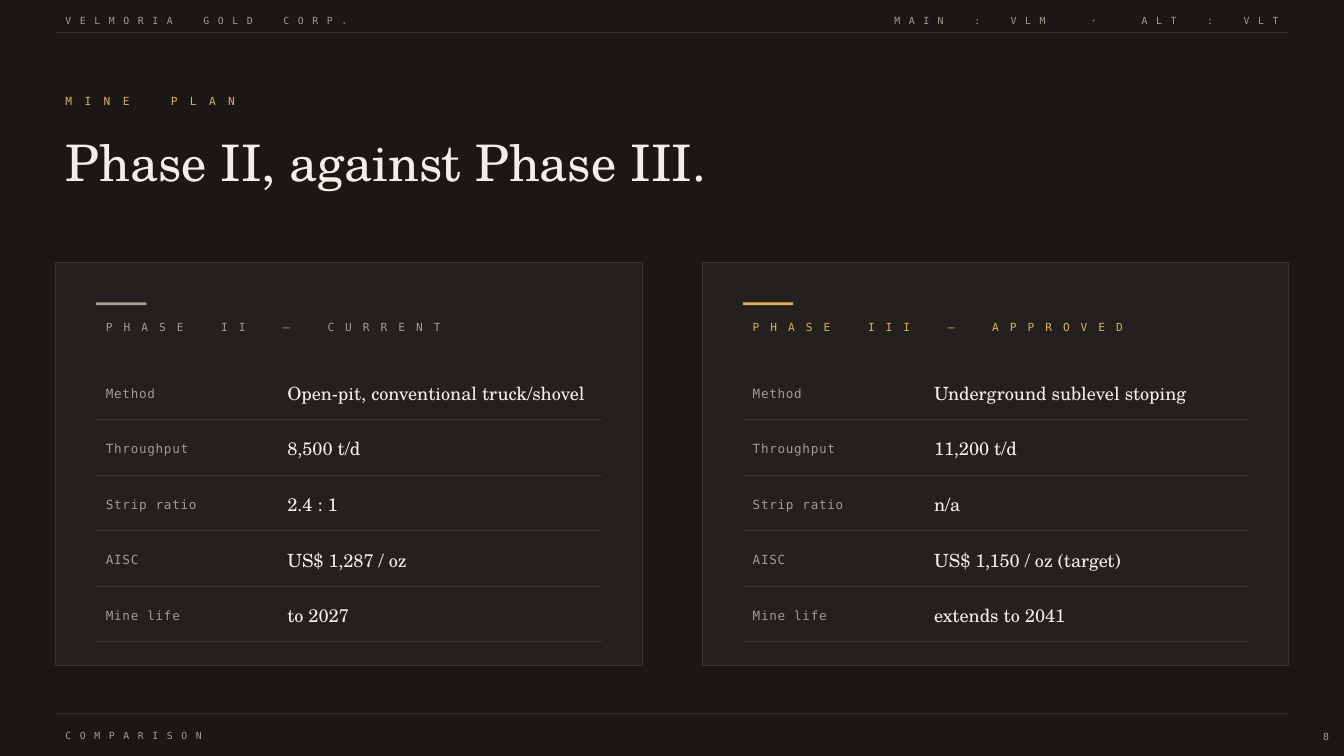
from dataclasses import dataclass

from lxml.etree import SubElement
from pptx import Presentation
from pptx.dml.color import RGBColor
from pptx.enum.shapes import MSO_CONNECTOR, MSO_SHAPE
from pptx.enum.text import MSO_ANCHOR, MSO_AUTO_SIZE, PP_ALIGN
from pptx.oxml.ns import qn
from pptx.util import Cm, Pt

BACKGROUND = RGBColor(0x1A, 0x17, 0x14)
PANEL = RGBColor(0x23, 0x20, 0x1D)
HAIRLINE = RGBColor(0x3A, 0x33, 0x2D)
MUTED = RGBColor(0xA3, 0x9C, 0x8F)
GOLD = RGBColor(0xD9, 0xB2, 0x5A)
IVORY = RGBColor(0xF4, 0xEF, 0xE6)

MONO = "DejaVu Sans Mono"
SERIF = "TeX Gyre Schola"
MONO_ADVANCE = 0.602  # character width as a share of the font size

# Lengths in centimetres
MARGIN = 1.4
CONTENT_WIDTH = 31.07
HALF_WIDTH = 15.24
CARD_TOP, CARD_WIDTH, CARD_HEIGHT = 6.6, 14.78, 10.16
CARD_PITCH = 16.3
CARD_PADDING = 1.02
ROW_TOP, ROW_PITCH, ROW_HEIGHT, RULE_OFFSET = 9.27, 1.4, 1.27, 1.3
VALUE_OFFSET = 4.57


@dataclass(frozen=True)
class Style:
    font: str
    size: float
    color: RGBColor
    spacing: float = 0


@dataclass(frozen=True)
class Box:
    left: float
    top: float
    width: float
    height: float

    def lengths(self) -> tuple:
        return Cm(self.left), Cm(self.top), Cm(self.width), Cm(self.height)


@dataclass(frozen=True)
class Phase:
    heading: str
    accent: RGBColor
    values: tuple


STRIP = Style(MONO, 7, MUTED, 1)
PAGE = Style(MONO, 7, MUTED)
EYEBROW = Style(MONO, 8, GOLD, 2)
TITLE = Style(SERIF, 36, IVORY)
ROW_LABEL = Style(MONO, 9, MUTED, 0.5)
ROW_VALUE = Style(SERIF, 13, IVORY)

MEASURES = ("Method", "Throughput", "Strip ratio", "AISC", "Mine life")
PHASES = (
    Phase("PHASE II — CURRENT", MUTED,
          ("Open-pit, conventional truck/shovel", "8,500 t/d", "2.4 : 1",
           "US$ 1,287 / oz", "to 2027")),
    Phase("PHASE III — APPROVED", GOLD,
          ("Underground sublevel stoping", "11,200 t/d", "n/a",
           "US$ 1,150 / oz (target)", "extends to 2041")),
)


def add_run(paragraph, text: str, style: Style, spacing: float) -> None:
    run = paragraph.add_run()
    run.text = text
    font_format = {"name": style.font, "size": Pt(style.size), "bold": False}
    for attribute, value in font_format.items():
        setattr(run.font, attribute, value)
    run.font.color.rgb = style.color
    if spacing:
        run._r.get_or_add_rPr().set("spc", str(round(spacing * 100)))


def prepare_frame(shape, align=PP_ALIGN.LEFT, anchor=MSO_ANCHOR.MIDDLE):
    frame_format = {"word_wrap": True, "auto_size": MSO_AUTO_SIZE.NONE,
                    "vertical_anchor": anchor}
    for attribute, value in frame_format.items():
        setattr(shape.text_frame, attribute, value)
    paragraph = shape.text_frame.paragraphs[0]
    paragraph.alignment = align
    return paragraph


def add_text(slide, box: Box, text: str, style: Style,
             align=PP_ALIGN.LEFT, anchor=MSO_ANCHOR.MIDDLE) -> None:
    shape = slide.shapes.add_textbox(*box.lengths())
    add_run(prepare_frame(shape, align, anchor), text, style, style.spacing)


def add_spaced_text(slide, box: Box, text: str, style: Style,
                    align=PP_ALIGN.LEFT) -> None:
    """Letter-spaced capitals, with one widened space between words."""
    paragraph = prepare_frame(slide.shapes.add_textbox(*box.lengths()), align)
    advance = style.size * MONO_ADVANCE + style.spacing
    words = text.split()
    for index, word in enumerate(words):
        if index:
            gap = 6 if "·" in (word, words[index - 1]) else 4
            add_run(paragraph, " ", style, style.spacing + (gap - 1) * advance)
        add_run(paragraph, " ".join(word), style, style.spacing)


def add_rectangle(slide, box: Box, fill: RGBColor, outlined: bool = False) -> None:
    shape = slide.shapes.add_shape(MSO_SHAPE.RECTANGLE, *box.lengths())
    shape.shadow.inherit = False
    shape.fill.solid()
    shape.fill.fore_color.rgb = fill
    if outlined:
        shape.line.color.rgb = HAIRLINE
        shape.line.width = Pt(0.5)
    else:
        shape.line.fill.background()


def add_rule(slide, left: float, top: float, width: float) -> None:
    connector = slide.shapes.add_connector(
        MSO_CONNECTOR.STRAIGHT, Cm(left), Cm(top), Cm(left + width), Cm(top))
    connector.line.color.rgb = HAIRLINE
    connector.line.width = Pt(0.4)
    SubElement(connector._element.spPr, qn("a:effectLst"))


def add_card(slide, left: float, phase: Phase) -> None:
    add_rectangle(slide, Box(left, CARD_TOP, CARD_WIDTH, CARD_HEIGHT), PANEL, True)
    inner_left = left + CARD_PADDING
    inner_width = CARD_WIDTH - 2 * CARD_PADDING
    add_rectangle(slide, Box(inner_left, CARD_TOP + CARD_PADDING, 1.27, 0.07),
                  phase.accent)
    add_spaced_text(slide, Box(inner_left, 7.87, inner_width, 0.76),
                    phase.heading, Style(MONO, 8, phase.accent, 1.5))
    for index, (measure, value) in enumerate(zip(MEASURES, phase.values)):
        top = ROW_TOP + index * ROW_PITCH
        add_text(slide, Box(inner_left, top, 4.32, ROW_HEIGHT), measure, ROW_LABEL)
        add_text(slide, Box(inner_left + VALUE_OFFSET, top, 8.69, ROW_HEIGHT),
                 value, ROW_VALUE)
        add_rule(slide, inner_left, top + RULE_OFFSET, inner_width)


def main() -> None:
    presentation = Presentation()
    presentation.slide_width = Cm(33.87)
    presentation.slide_height = Cm(19.05)
    slide = presentation.slides.add_slide(presentation.slide_layouts[5])
    slide.background.fill.solid()
    slide.background.fill.fore_color.rgb = BACKGROUND

    # Header and footer strips
    for top in (0.81, 17.98):
        add_rectangle(slide, Box(MARGIN, top, CONTENT_WIDTH, 0.02), HAIRLINE)
    add_spaced_text(slide, Box(MARGIN, 0.25, HALF_WIDTH, 0.56),
                    "VELMORIA GOLD CORP.", STRIP)
    add_spaced_text(slide, Box(MARGIN + CONTENT_WIDTH - HALF_WIDTH, 0.25, HALF_WIDTH, 0.56),
                    "MAIN : VLM · ALT : VLT", STRIP, PP_ALIGN.RIGHT)
    add_spaced_text(slide, Box(MARGIN, 18.29, HALF_WIDTH, 0.51), "COMPARISON", STRIP)
    add_text(slide, Box(MARGIN + CONTENT_WIDTH, 18.29, 1.27, 0.51), "8", PAGE,
             PP_ALIGN.RIGHT, MSO_ANCHOR.TOP)

    # Eyebrow and title
    add_spaced_text(slide, Box(MARGIN, 2.16, 10.16, 0.76), "MINE PLAN", EYEBROW)
    title = slide.shapes.title
    title.left, title.top, title.width, title.height = Box(
        MARGIN, 2.92, 30.48, 2.29).lengths()
    add_run(prepare_frame(title), "Phase II, against Phase III.", TITLE, TITLE.spacing)

    # Phase cards
    for index, phase in enumerate(PHASES):
        add_card(slide, MARGIN + index * CARD_PITCH, phase)

    presentation.save("out.pptx")


if __name__ == "__main__":
    main()
